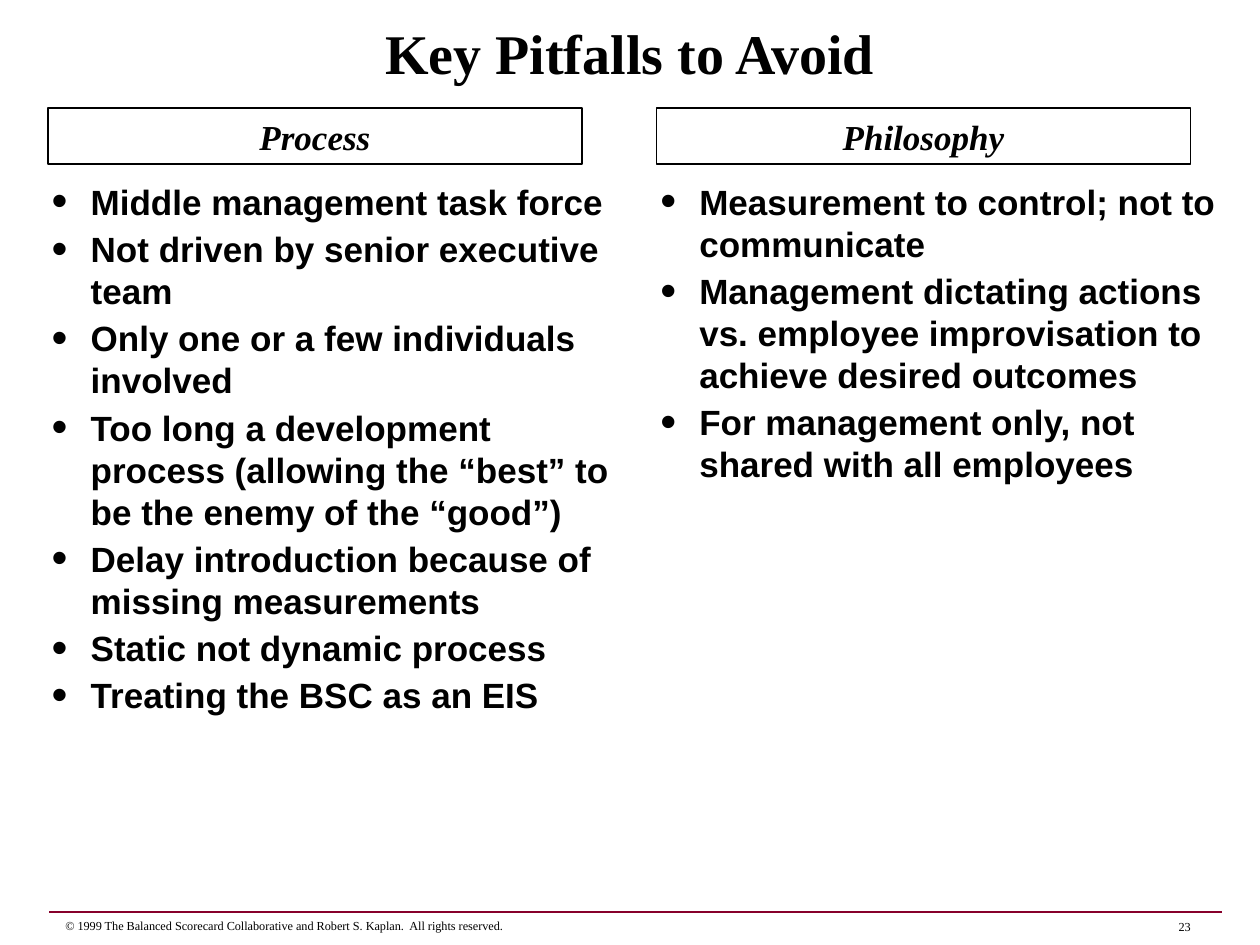
from lxml import etree
from pptx import Presentation, util as u
from pptx.dml.color import RGBColor
from pptx.enum import shapes, text
from pptx.oxml.ns import qn

# Content
TITLE = "Key Pitfalls to Avoid"
COLUMNS = [
    ("Process", [
        "Middle management task force",
        "Not driven by senior executive team",
        "Only one or a few individuals involved",
        "Too long a development process (allowing the “best” to be the enemy of the “good”)",
        "Delay introduction because of missing measurements",
        "Static not dynamic process",
        "Treating the BSC as an EIS",
    ]),
    ("Philosophy", [
        "Measurement to control; not to communicate",
        "Management dictating actions vs. employee improvisation to achieve desired outcomes",
        "For management only, not shared with all employees",
    ]),
]
COPYRIGHT = ("© 1999 The Balanced Scorecard Collaborative and Robert S. Kaplan.  "
             "All rights reserved.")
PAGE = "23"

# Style and grid, in inches
SERIF, SANS = "Times New Roman", "Arial"
BLACK, WHITE, MAROON = "000000", "FFFFFF", "87002B"
COLUMN_LEFT, COLUMN_PITCH = 0.38, 4.83
HEADING_TOP, HEADING_WIDTH, HEADING_HEIGHT = 0.86, 4.24, 0.44
LIST_TOP, LIST_WIDTH, LIST_HEIGHT = 1.38, 4.65, 5.8
LIST_OUTDENT = 0.07
INDENT = 0.31
FOOTER_TOP = 7.24


def rgb(value):
    return RGBColor.from_string(value)


def inches(*lengths):
    return [u.Inches(length) for length in lengths]


def style(paragraph, font, size, bold=False, italic=False, align=text.PP_ALIGN.LEFT):
    paragraph.alignment = align
    for run in paragraph.runs:
        run.font.name, run.font.size = font, u.Pt(size)
        run.font.bold, run.font.italic = bold, italic
        run.font.color.rgb = rgb(BLACK)


def set_frame(frame, anchor=text.MSO_ANCHOR.MIDDLE, wrap=True):
    frame.auto_size = text.MSO_AUTO_SIZE.NONE
    frame.vertical_anchor = anchor
    frame.word_wrap = wrap


def place(placeholder, *box):
    (placeholder.left, placeholder.top,
     placeholder.width, placeholder.height) = inches(*box)


def add_bullet(paragraph):
    props = paragraph._p.get_or_add_pPr()
    props.set("marL", str(u.Inches(INDENT)))
    props.set("indent", str(-u.Inches(INDENT)))
    color = etree.SubElement(props, qn("a:buClr"))
    etree.SubElement(color, qn("a:srgbClr"), val=BLACK)
    etree.SubElement(props, qn("a:buSzPct"), val="130000")
    etree.SubElement(props, qn("a:buFont"), typeface=SANS)
    etree.SubElement(props, qn("a:buChar"), char="•")


def add_heading(slide, label, left):
    heading = slide.shapes.add_shape(
        shapes.MSO_SHAPE.RECTANGLE,
        *inches(left, HEADING_TOP, HEADING_WIDTH, HEADING_HEIGHT))
    heading.shadow.inherit = False
    heading.fill.solid()
    heading.fill.fore_color.rgb = rgb(WHITE)
    heading.line.color.rgb = rgb(BLACK)
    heading.line.width = u.Pt(1)
    set_frame(heading.text_frame, wrap=False)
    heading.text_frame.text = label
    style(heading.text_frame.paragraphs[0], SERIF, 20, True, True, text.PP_ALIGN.CENTER)


def fill_list(body, items, left):
    place(body, left, LIST_TOP, LIST_WIDTH, LIST_HEIGHT)
    set_frame(body.text_frame, text.MSO_ANCHOR.TOP)
    body.text_frame.text = "\n".join(items)
    for number, paragraph in enumerate(body.text_frame.paragraphs):
        paragraph.line_spacing = 1.0
        paragraph.space_before = u.Pt(3 if number else 0)
        add_bullet(paragraph)
        style(paragraph, SANS, 20, bold=True)


def add_footer_text(slide, words, box, align):
    footer = slide.shapes.add_textbox(*inches(*box))
    set_frame(footer.text_frame)
    footer.text_frame.text = words
    style(footer.text_frame.paragraphs[0], SERIF, 7, align=align)


def main():
    deck = Presentation()
    deck.slide_width, deck.slide_height = inches(10, 7.5)
    slide = deck.slides.add_slide(deck.slide_layouts.get_by_name("Two Content"))

    # Footer rule, copyright line and page number
    rule = slide.shapes.add_connector(
        shapes.MSO_CONNECTOR.STRAIGHT, *inches(0.39, FOOTER_TOP, 9.7, FOOTER_TOP))
    rule.line.color.rgb = rgb(MAROON)
    rule.line.width = u.Pt(1)
    etree.SubElement(rule._element.spPr, qn("a:effectLst"))
    add_footer_text(slide, COPYRIGHT, (0.42, FOOTER_TOP, 5.5, 0.21), text.PP_ALIGN.LEFT)
    add_footer_text(slide, PAGE, (9.08, FOOTER_TOP, 0.47, 0.23), text.PP_ALIGN.RIGHT)

    # Title
    title, *bodies = slide.placeholders
    place(title, 0.75, 0.24, 8.5, 0.42)
    set_frame(title.text_frame)
    title.text_frame.text = TITLE
    heading_line = title.text_frame.paragraphs[0]
    heading_line.line_spacing = 0.9
    style(heading_line, SERIF, 32, bold=True, align=text.PP_ALIGN.CENTER)

    # Two columns: framed heading above a bulleted list
    for column, ((label, items), body) in enumerate(zip(COLUMNS, bodies)):
        left = COLUMN_LEFT + column * COLUMN_PITCH
        add_heading(slide, label, left)
        fill_list(body, items, left - LIST_OUTDENT)

    deck.save("out.pptx")


if __name__ == "__main__":
    main()
